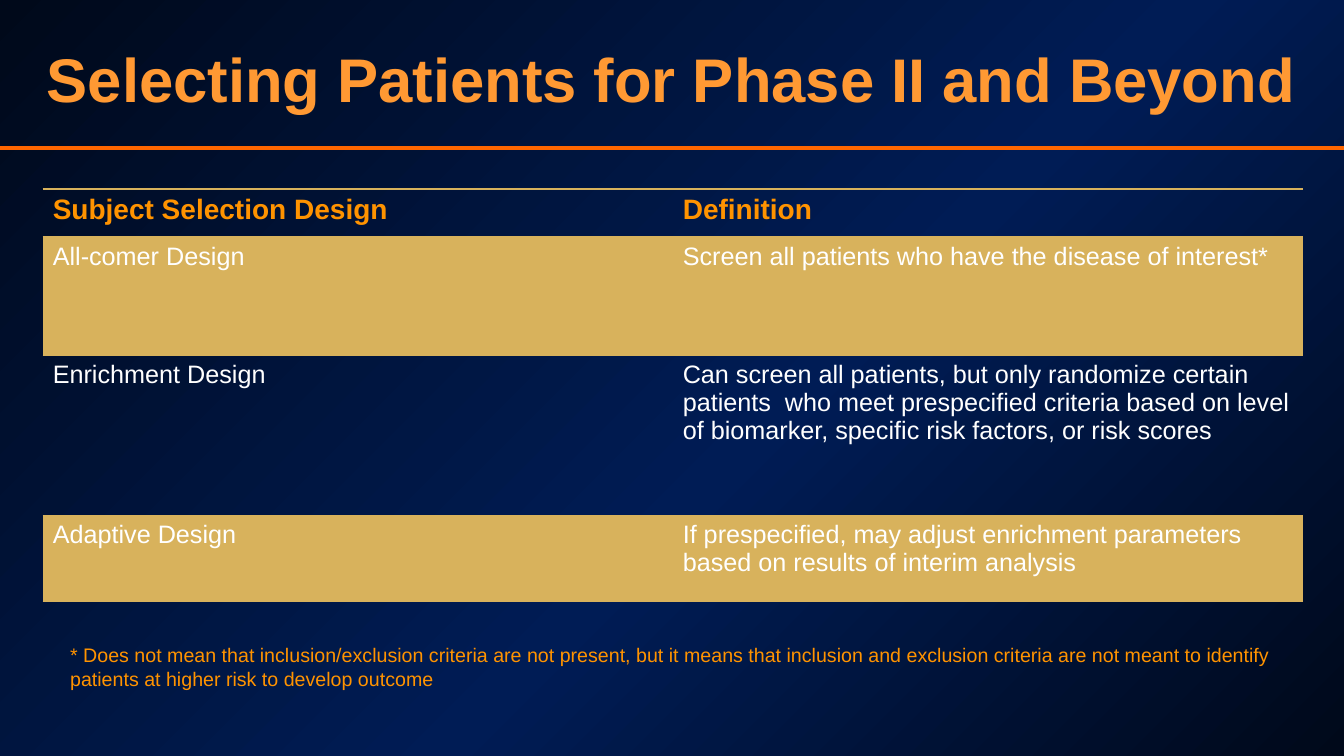
from dataclasses import dataclass

from lxml.etree import SubElement
from pptx import Presentation
from pptx.dml.color import RGBColor
from pptx.enum.shapes import MSO_CONNECTOR
from pptx.enum.text import PP_ALIGN
from pptx.oxml.ns import qn
from pptx.util import Pt


@dataclass(frozen=True)
class Theme:
    font: str = "Arial"
    edge: str = "00091A"
    glow: str = "001C55"
    title: str = "FF9933"
    rule: str = "FF6600"
    accent: str = "FF9300"
    gold: str = "D8B25C"
    body: str = "FFFFFF"
    title_size: int = 44
    header_size: int = 20
    body_size: int = 18
    note_size: int = 14


THEME = Theme()
SLIDE_WIDTH, SLIDE_HEIGHT = 960, 540
COLUMN_WIDTH = 450
ROW_HEIGHTS = (34.5, 84.5, 114.5, 61)
DESIGNS = (
    ("Subject Selection Design", "Definition"),
    ("All-comer Design", "Screen all patients who have the disease of interest*"),
    ("Enrichment Design",
     "Can screen all patients, but only randomize certain patients  who meet "
     "prespecified criteria based on level of biomarker, specific risk factors, "
     "or risk scores"),
    ("Adaptive Design",
     "If prespecified, may adjust enrichment parameters based on results of "
     "interim analysis"),
)
FOOTNOTE = (
    "* Does not mean that inclusion/exclusion criteria are not present, but it "
    "means that inclusion and exclusion criteria are not meant to identify "
    "patients at higher risk to develop outcome"
)


def paint_background(slide):
    """Fill the slide with a diagonal gradient, brightest past the middle."""
    slide.background.fill.gradient()
    gradient = slide.element.find(".//" + qn("a:gradFill"))
    for child in list(gradient):
        gradient.remove(child)
    stops = SubElement(gradient, qn("a:gsLst"))
    for percent, color in ((0, THEME.edge), (57, THEME.glow), (100, THEME.edge)):
        stop = SubElement(stops, qn("a:gs"), pos=str(percent * 1000))
        SubElement(stop, qn("a:srgbClr"), val=color)
    SubElement(gradient, qn("a:lin"), ang=str(45 * 60000), scaled="0")


def set_text(frame, content, size, color, bold=False, align=PP_ALIGN.LEFT):
    frame.text = content
    frame.word_wrap = True
    paragraph = frame.paragraphs[0]
    paragraph.alignment = align
    font = paragraph.runs[0].font
    font.name, font.size, font.bold = THEME.font, Pt(size), bold
    font.color.rgb = RGBColor.from_string(color)


def add_text(slide, left, top, width, height, *text_format, **options):
    frame = slide.shapes.add_textbox(
        Pt(left), Pt(top), Pt(width), Pt(height)).text_frame
    set_text(frame, *text_format, **options)
    return frame


def add_title_rule(slide, y):
    rule = slide.shapes.add_connector(
        MSO_CONNECTOR.STRAIGHT, 0, Pt(y), Pt(SLIDE_WIDTH), Pt(y))
    rule.line.color.rgb = RGBColor.from_string(THEME.rule)
    rule.line.width = Pt(3)
    SubElement(rule.element.spPr, qn("a:effectLst"))


def set_borders(cell, top, bottom):
    """Draw gold lines of the given widths above and below, none at the sides."""
    properties = cell._tc.get_or_add_tcPr()
    for side, width in (("L", 0), ("R", 0), ("T", top), ("B", bottom)):
        border = SubElement(properties, qn(f"a:ln{side}"), w=str(Pt(width)))
        if width:
            fill = SubElement(border, qn("a:solidFill"))
            SubElement(fill, qn("a:srgbClr"), val=THEME.gold)
        else:
            SubElement(border, qn("a:noFill"))


def fill_cell(cell, tinted):
    if not tinted:
        cell.fill.background()
        return
    cell.fill.solid()
    cell.fill.fore_color.rgb = RGBColor.from_string(THEME.gold)
    tint = cell._tc.tcPr.find(".//" + qn("a:srgbClr"))
    SubElement(tint, qn("a:alpha"), val="20000")


def add_design_table(slide, left, top):
    table = slide.shapes.add_table(
        len(DESIGNS), 2, Pt(left), Pt(top),
        Pt(2 * COLUMN_WIDTH), Pt(sum(ROW_HEIGHTS))).table
    table.horz_banding = False
    for column in table.columns:
        column.width = Pt(COLUMN_WIDTH)
    for index, (texts, height) in enumerate(zip(DESIGNS, ROW_HEIGHTS)):
        table.rows[index].height = Pt(height)
        is_header = index == 0
        size = THEME.header_size if is_header else THEME.body_size
        color = THEME.accent if is_header else THEME.body
        for cell, content in zip(table.rows[index].cells, texts):
            set_text(cell.text_frame, content, size, color, bold=is_header)
            set_borders(cell, top=2 if index == 1 else 1,
                        bottom=2 if is_header else 1)
            fill_cell(cell, tinted=index % 2 == 1)


def main():
    presentation = Presentation()
    presentation.slide_width = Pt(SLIDE_WIDTH)
    presentation.slide_height = Pt(SLIDE_HEIGHT)
    slide = presentation.slides.add_slide(presentation.slide_layouts[6])
    paint_background(slide)
    add_title_rule(slide, 106)
    title = add_text(slide, 0, 21.5, SLIDE_WIDTH, 60.5,
                     "Selecting Patients for Phase II and Beyond",
                     THEME.title_size, THEME.title,
                     bold=True, align=PP_ALIGN.CENTER)
    title.margin_top, title.margin_bottom = Pt(8), Pt(2)
    add_design_table(slide, 30.5, 135)
    add_text(slide, 43, 456, 874, 41, FOOTNOTE, THEME.note_size, THEME.accent)
    presentation.save("out.pptx")


if __name__ == "__main__":
    main()
